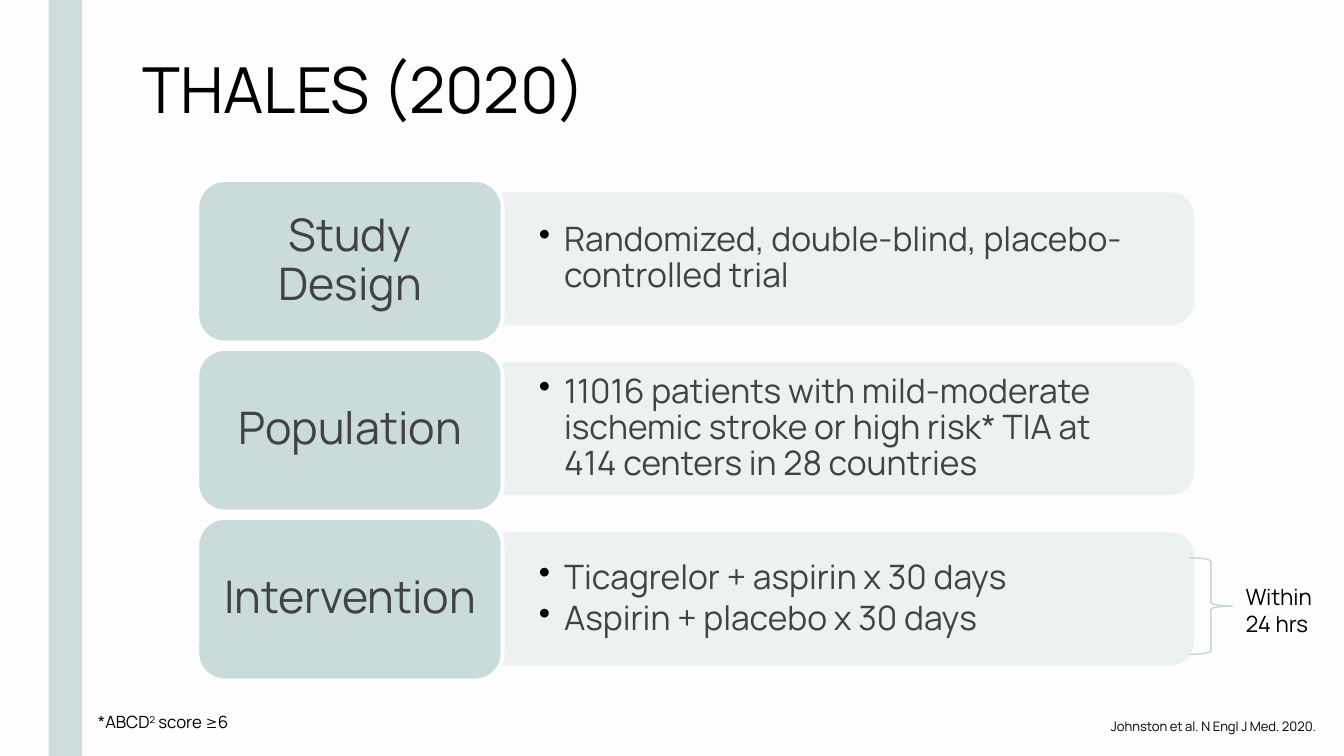
"""Build the THALES trial summary slide with three labelled rows."""
from dataclasses import dataclass

from lxml.etree import SubElement
from pptx import Presentation
from pptx.dml.color import RGBColor
from pptx.enum.shapes import MSO_SHAPE
from pptx.enum.text import MSO_ANCHOR, PP_ALIGN
from pptx.oxml.ns import qn
from pptx.shapes.autoshape import Shape
from pptx.slide import Slide
from pptx.text.text import TextFrame, _Paragraph
from pptx.util import Pt

FONT = "Manrope"
COLORS = {
    "background": "FDFDFD",
    "sidebar": "CADCDC",
    "label": "CADBDB",
    "panel": "EBF1F1",
    "outline": "FFFFFF",
    "brace": "C4D6D6",
    "text": "424242",
    "black": "000000",
}
PANEL_ALPHA = "89000"
CORNER = 0.167
LABEL_LEFT, LABEL_WIDTH, LABEL_HEIGHT = 105.8, 163.5, 87
FIRST_LABEL_TOP, LABEL_PITCH = 96.5, 90.5
PANEL_WIDTH, PANEL_HEIGHT = 369.4, 69.2
FIRST_PANEL_CENTER, PANEL_PITCH = 138.6, 91.1
PANEL_LEFT = LABEL_LEFT + LABEL_WIDTH
BULLET_INDENT = 13.5


@dataclass(frozen=True)
class Box:
    left: float
    top: float
    width: float
    height: float

    def lengths(self) -> tuple[Pt, Pt, Pt, Pt]:
        return Pt(self.left), Pt(self.top), Pt(self.width), Pt(self.height)


@dataclass(frozen=True)
class Row:
    label: str
    bullets: tuple[str, ...]


@dataclass(frozen=True)
class Note:
    text: str
    box: Box
    size: float
    align: PP_ALIGN = PP_ALIGN.LEFT


ROWS = (
    Row("Study Design", ("Randomized, double-blind, placebo-controlled trial",)),
    Row("Population", (
        "11016 patients with mild-moderate ischemic stroke or high risk* TIA at 414 centers in 28 countries",
    )),
    Row("Intervention", ("Ticagrelor + aspirin x 30 days", "Aspirin + placebo x 30 days")),
)
CITATION = Note("Johnston et al. N Engl J Med. 2020.", Box(409.7, 381.6, 302.4, 15.8), 7, PP_ALIGN.RIGHT)
TIMING = Note("Within 24 hrs", Box(660.2, 308.9, 51.8, 36), 12)
FOOTNOTE = Note("*ABCD", Box(45.4, 378, 302.4, 26.6), 9)


def rgb(name: str) -> RGBColor:
    return RGBColor.from_string(COLORS[name])


def format_runs(paragraph: _Paragraph, size: float, color: str) -> None:
    for run in paragraph.runs:
        run.font.name = FONT
        run.font.size = Pt(size)
        run.font.color.rgb = rgb(color)


def add_block(slide: Slide, kind: MSO_SHAPE, box: Box, fill: str, line: str | None = None) -> Shape:
    shape = slide.shapes.add_shape(kind, *box.lengths())
    shape.shadow.inherit = False
    shape.fill.solid()
    shape.fill.fore_color.rgb = rgb(fill)
    if line:
        shape.line.color.rgb = rgb(line)
        shape.line.width = Pt(2)
    else:
        shape.line.fill.background()
    return shape


def add_panel(slide: Slide, center: float) -> None:
    left = PANEL_LEFT + (PANEL_WIDTH - PANEL_HEIGHT) / 2
    box = Box(left, center - PANEL_WIDTH / 2, PANEL_HEIGHT, PANEL_WIDTH)
    panel = add_block(slide, MSO_SHAPE.ROUND_2_SAME_RECTANGLE, box, "panel", "panel")
    panel.rotation = 90
    panel.adjustments[0] = CORNER
    for color in panel._element.spPr.iter(qn("a:srgbClr")):
        SubElement(color, qn("a:alpha"), val=PANEL_ALPHA)


def add_text_frame(slide: Slide, box: Box) -> TextFrame:
    frame = slide.shapes.add_textbox(*box.lengths()).text_frame
    frame.word_wrap = True
    return frame


def add_bullets(slide: Slide, center: float, bullets: tuple[str, ...]) -> None:
    height = 62.6
    frame = add_text_frame(slide, Box(PANEL_LEFT, center - height / 2, 365.8, height))
    frame.vertical_anchor = MSO_ANCHOR.MIDDLE
    frame.margin_left = frame.margin_right = Pt(19.4)
    frame.margin_top = frame.margin_bottom = Pt(10)
    frame.text = "\n".join(bullets)
    for index, paragraph in enumerate(frame.paragraphs):
        properties = paragraph._p.get_or_add_pPr()
        properties.set("marL", str(Pt(BULLET_INDENT)))
        properties.set("indent", str(-Pt(BULLET_INDENT)))
        bullet_color = SubElement(properties, qn("a:buClr"))
        SubElement(bullet_color, qn("a:srgbClr"), val=COLORS["black"])
        SubElement(properties, qn("a:buChar"), char="•")
        paragraph.line_spacing = 0.9
        if index:
            paragraph.space_before = Pt(2.7)
        format_runs(paragraph, 18, "text")


def add_label(slide: Slide, top: float, text: str) -> None:
    box = Box(LABEL_LEFT, top, LABEL_WIDTH, LABEL_HEIGHT)
    label = add_block(slide, MSO_SHAPE.ROUNDED_RECTANGLE, box, "label", "outline")
    label.adjustments[0] = CORNER
    frame = label.text_frame
    frame.word_wrap = True
    frame.vertical_anchor = MSO_ANCHOR.MIDDLE
    frame.text = text
    paragraph = frame.paragraphs[0]
    paragraph.alignment = PP_ALIGN.CENTER
    paragraph.line_spacing = 0.9
    format_runs(paragraph, 24, "text")


def add_note(slide: Slide, note: Note) -> _Paragraph:
    frame = add_text_frame(slide, note.box)
    frame.text = note.text
    paragraph = frame.paragraphs[0]
    paragraph.alignment = note.align
    format_runs(paragraph, note.size, "black")
    return paragraph


def add_footnote(slide: Slide) -> None:
    paragraph = add_note(slide, FOOTNOTE)
    exponent = paragraph.add_run()
    exponent.text = "2"
    exponent._r.get_or_add_rPr().set("baseline", "30000")
    paragraph.add_run().text = " score ≥6"
    format_runs(paragraph, FOOTNOTE.size, "black")


def set_title(slide: Slide, text: str) -> None:
    title = slide.shapes.title
    title.left, title.top, title.width, title.height = Box(69.1, 23, 508.3, 48.2).lengths()
    frame = title.text_frame
    frame.text = text
    frame.vertical_anchor = MSO_ANCHOR.TOP
    frame.paragraphs[0].alignment = PP_ALIGN.LEFT
    format_runs(frame.paragraphs[0], 34, "black")


def add_brace(slide: Slide) -> None:
    brace = slide.shapes.add_shape(MSO_SHAPE.RIGHT_BRACE, *Box(637.2, 298.8, 23, 51.8).lengths())
    brace.shadow.inherit = False
    brace.fill.background()
    brace.line.color.rgb = rgb("brace")
    brace.line.width = Pt(0.75)


def main() -> None:
    presentation = Presentation()
    presentation.slide_width, presentation.slide_height = Pt(720), Pt(405)
    slide = presentation.slides.add_slide(presentation.slide_layouts[5])
    slide.background.fill.solid()
    slide.background.fill.fore_color.rgb = rgb("background")
    add_block(slide, MSO_SHAPE.RECTANGLE, Box(26, -3.6, 18, 412.6), "sidebar")
    set_title(slide, "THALES (2020)")
    for index, row in enumerate(ROWS):
        center = FIRST_PANEL_CENTER + index * PANEL_PITCH
        add_panel(slide, center)
        add_bullets(slide, center, row.bullets)
        add_label(slide, FIRST_LABEL_TOP + index * LABEL_PITCH, row.label)
    add_note(slide, CITATION)
    add_brace(slide)
    add_note(slide, TIMING)
    add_footnote(slide)
    presentation.save("out.pptx")


if __name__ == "__main__":
    main()
